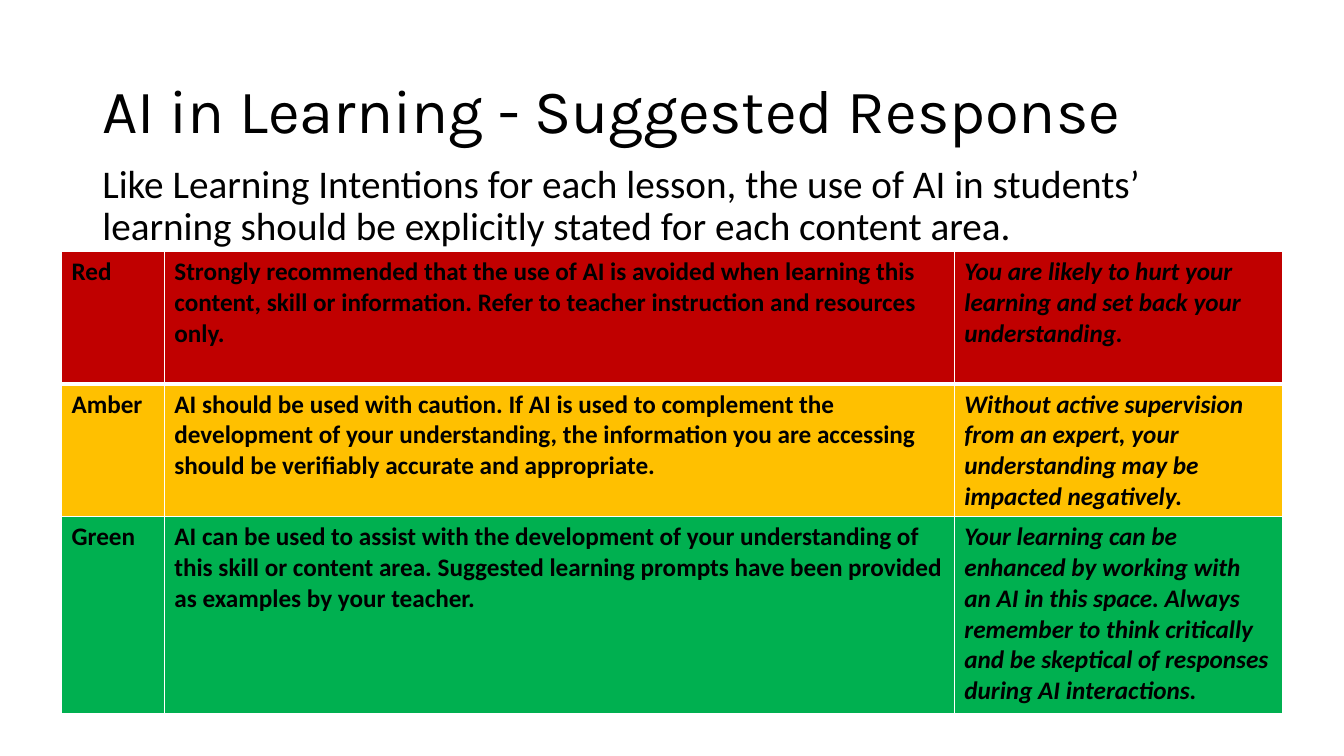
import pptx
import pptx.util
import pptx.dml.color
import pptx.enum.text
from lxml import etree
from pptx.oxml.ns import qn

Cm = pptx.util.Cm
Pt = pptx.util.Pt
RGBColor = pptx.dml.color.RGBColor
Anchor = pptx.enum.text.MSO_ANCHOR

BLACK = RGBColor(0x00, 0x00, 0x00)
WHITE = RGBColor(0xFF, 0xFF, 0xFF)
RED = RGBColor(0xC0, 0x00, 0x00)
AMBER = RGBColor(0xFF, 0xC0, 0x00)
GREEN = RGBColor(0x00, 0xB0, 0x50)

COLUMN_WIDTHS = (2.59, 19.91, 8.26)

# Level, guidance, effect on learning, fill, row height in cm
LEVELS = (
    ("Red",
     "Strongly recommended that the use of AI is avoided when learning this content, "
     "skill or information. Refer to teacher instruction and resources only.",
     "You are likely to hurt your learning and set back your understanding.",
     RED, 3.34),
    ("Amber",
     "AI should be used with caution. If AI is used to complement the development of "
     "your understanding, the information you are accessing should be verifiably "
     "accurate and appropriate.",
     "Without active supervision from an expert, your understanding may be impacted "
     "negatively.",
     AMBER, 3.34),
    ("Green",
     "AI can be used to assist with the development of your understanding of this skill "
     "or content area. Suggested learning prompts have been provided as examples by "
     "your teacher.",
     "Your learning can be enhanced by working with an AI in this space. Always remember "
     "to think critically and be skeptical of responses during AI interactions.",
     GREEN, 4.95),
)


def write_text(frame, text, *, size, font="Calibri", bold=False, italic=False,
               line_spacing=None, anchor=Anchor.TOP):
    frame.word_wrap = True
    frame.vertical_anchor = anchor
    paragraph = frame.paragraphs[0]
    paragraph.line_spacing = line_spacing
    run = paragraph.add_run()
    run.text = text
    run.font.name = font
    run.font.size = Pt(size)
    run.font.bold = bold
    run.font.italic = italic
    run.font.color.rgb = BLACK


def set_borders(cell, bottom=1, top=1):
    properties = cell._tc.get_or_add_tcPr()
    widths = {"a:lnL": 1, "a:lnR": 1, "a:lnT": top, "a:lnB": bottom}
    for position, (tag, width) in enumerate(widths.items()):
        line = etree.Element(qn(tag), w=str(Pt(width)))
        fill = etree.SubElement(line, qn("a:solidFill"))
        etree.SubElement(fill, qn("a:srgbClr"), val=str(WHITE))
        properties.insert(position, line)


def add_heading(slide, left, top, width):
    # Title
    title = slide.shapes.add_textbox(Cm(left), Cm(top), Cm(width), Cm(3.68))
    write_text(title.text_frame, "AI in Learning - Suggested Response", size=44,
               font="Karla", line_spacing=0.9, anchor=Anchor.MIDDLE)

    # Introduction
    introduction = slide.shapes.add_textbox(Cm(left), Cm(top + 3), Cm(width), Cm(12.09))
    write_text(introduction.text_frame,
               "Like Learning Intentions for each lesson, the use of AI in students’ "
               "learning should be explicitly stated for each content area.",
               size=28, line_spacing=0.9)


def add_levels_table(slide, left, top):
    height = sum(level[-1] for level in LEVELS)
    table = slide.shapes.add_table(len(LEVELS), len(COLUMN_WIDTHS), Cm(left), Cm(top),
                                   Cm(sum(COLUMN_WIDTHS)), Cm(height)).table
    for column, width in zip(table.columns, COLUMN_WIDTHS):
        column.width = Cm(width)

    for row, (*texts, color, row_height) in enumerate(LEVELS):
        table.rows[row].height = Cm(row_height)
        for column, text in enumerate(texts):
            cell = table.cell(row, column)
            cell.fill.solid()
            cell.fill.fore_color.rgb = color
            # A thicker rule separates red from the levels below
            set_borders(cell, bottom=3 if row == 0 else 1, top=3 if row == 1 else 1)
            write_text(cell.text_frame, text, size=18, bold=True, italic=column == 2)


def main():
    presentation = pptx.Presentation()
    presentation.slide_width = Cm(33.87)
    presentation.slide_height = Cm(19.05)
    slide = presentation.slides.add_slide(presentation.slide_layouts[6])
    add_heading(slide, left=2.33, top=1.02, width=29.21)
    add_levels_table(slide, left=1.55, top=6.34)
    presentation.save("out.pptx")


if __name__ == "__main__":
    main()
